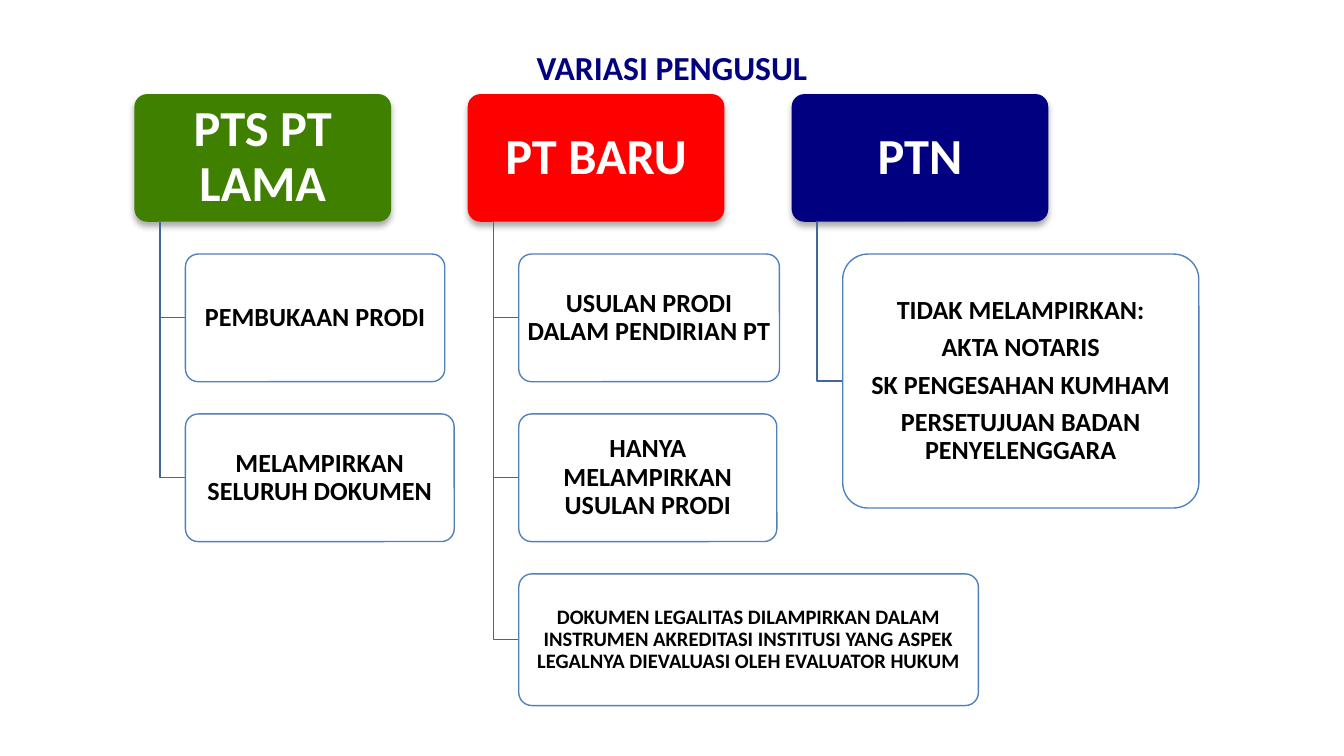
from lxml import etree
from pptx import Presentation, util as u
from pptx.dml.color import RGBColor
from pptx.enum import shapes, text
from pptx.oxml import parse_xml
from pptx.oxml.ns import nsdecls, qn

COLORS = {"navy": "000080", "green": "408000", "red": "FF0000", "white": "FFFFFF",
          "black": "000000", "border": "4F81BD", "link": "3F6797"}
TITLE = "VARIASI PENGUSUL"
COLUMNS = [
    {"left": 1, "head": "PTS PT LAMA", "color": "green", "boxes": [
        (1.93, 0.95, 14, ["PEMBUKAAN PRODI"]),
        (2, 0.95, 14, ["MELAMPIRKAN SELURUH DOKUMEN"])]},
    {"left": 3.48, "head": "PT BARU", "color": "red", "boxes": [
        (1.94, 0.95, 14, ["USULAN PRODI DALAM PENDIRIAN PT"]),
        (1.92, 0.95, 14, ["HANYA MELAMPIRKAN USULAN PRODI"]),
        (3.42, 0.98, 11, ["DOKUMEN LEGALITAS DILAMPIRKAN DALAM INSTRUMEN AKREDITASI "
                          "INSTITUSI YANG ASPEK LEGALNYA DIEVALUASI OLEH EVALUATOR HUKUM"])]},
    {"left": 5.89, "head": "PTN", "color": "navy", "boxes": [
        (2.65, 1.89, 14, ["TIDAK MELAMPIRKAN:", "AKTA NOTARIS", "SK PENGESAHAN KUMHAM",
                          "PERSETUJUAN BADAN PENYELENGGARA"])]},
]
TOP, HEAD_W, HEAD_H, GAP, STEP = 0.7, 1.91, 0.95, 0.24, 0.19
SHADOW = (f'<a:effectLst {nsdecls("a")}><a:outerShdw blurRad="{u.Pt(3.5)}" dist="{u.Pt(2.2)}" '
          'dir="5400000" rotWithShape="0"><a:srgbClr val="000000"><a:alpha val="32000"/>'
          '</a:srgbClr></a:outerShdw></a:effectLst>')


def rgb(name):
    return RGBColor.from_string(COLORS[name])


def write(sp, lines, size, color, anchor, inset, **spacing):
    tf = sp.text_frame
    x, y = map(u.Inches, inset)
    frame = {"word_wrap": True, "vertical_anchor": anchor,
             "margin_left": x, "margin_right": x, "margin_top": y, "margin_bottom": y}
    for name, value in frame.items():
        setattr(tf, name, value)
    for i, line in enumerate(lines):
        p = tf.paragraphs[0] if i == 0 else tf.add_paragraph()
        for name, value in {"alignment": text.PP_ALIGN.CENTER, **spacing}.items():
            setattr(p, name, value)
        r = p.add_run()
        r.text = line
        for name, value in {"name": "Calibri", "size": u.Pt(size), "bold": True}.items():
            setattr(r.font, name, value)
        r.font.color.rgb = rgb(color)


def add_box(s, place, fill, lines, size, color, inset):
    sp = s.shapes.add_shape(shapes.MSO_SHAPE.ROUNDED_RECTANGLE, *map(u.Inches, place))
    sp.adjustments[0] = 0.1
    sp.shadow.inherit = False
    sp.fill.solid()
    sp.fill.fore_color.rgb = rgb(fill)
    write(sp, lines, size, color, text.MSO_ANCHOR.MIDDLE, inset,
          line_spacing=0.9, space_after=u.Pt(size * 0.35))
    return sp


def add_head(s, column):
    sp = add_box(s, (column["left"], TOP, HEAD_W, HEAD_H), column["color"],
                 [column["head"]], 27, "white", (0.06, 0.04))
    sp.line.fill.background()
    effects = sp._element.spPr.find(qn("a:effectLst"))
    effects.getparent().replace(effects, parse_xml(SHADOW))


def add_item(s, place, lines, size):
    sp = add_box(s, place, "white", lines, size, "black", (0.03, 0.02))
    sp.line.color.rgb = rgb("border")
    sp.line.width = u.Pt(0.75)
    color = sp._element.spPr.find(qn("a:solidFill")).find(qn("a:srgbClr"))
    etree.SubElement(color, qn("a:alpha")).set("val", "90000")


def add_link(s, x, y, middle):
    points = [(u.Inches(a), u.Inches(b)) for a, b in [(x, y), (x, middle), (x + STEP, middle)]]
    builder = s.shapes.build_freeform(*points[0])
    builder.add_line_segments(points[1:], close=False)
    sp = builder.convert_to_shape()
    sp.shadow.inherit = False
    sp.fill.background()
    sp.line.color.rgb = rgb("link")
    sp.line.width = u.Pt(0.75)


def main():
    prs = Presentation()
    prs.slide_width = u.Inches(10)
    prs.slide_height = u.Inches(10 * 9 / 16)
    s = prs.slides.add_slide(prs.slide_layouts[6])
    title = s.shapes.add_textbox(*map(u.Inches, (1.74, 0.3, 6.52, 0.4)))
    write(title, [TITLE], 18, "navy", text.MSO_ANCHOR.TOP, (0.1, 0.05))
    for column in COLUMNS:
        add_head(s, column)
        trunk = column["left"] + STEP
        top = TOP + HEAD_H + GAP
        for width, height, size, lines in column["boxes"]:
            add_link(s, trunk, TOP + HEAD_H, top + height / 2)
            add_item(s, (trunk + STEP, top, width, height), lines, size)
            top += height + GAP
    prs.save("out.pptx")


if __name__ == "__main__":
    main()
